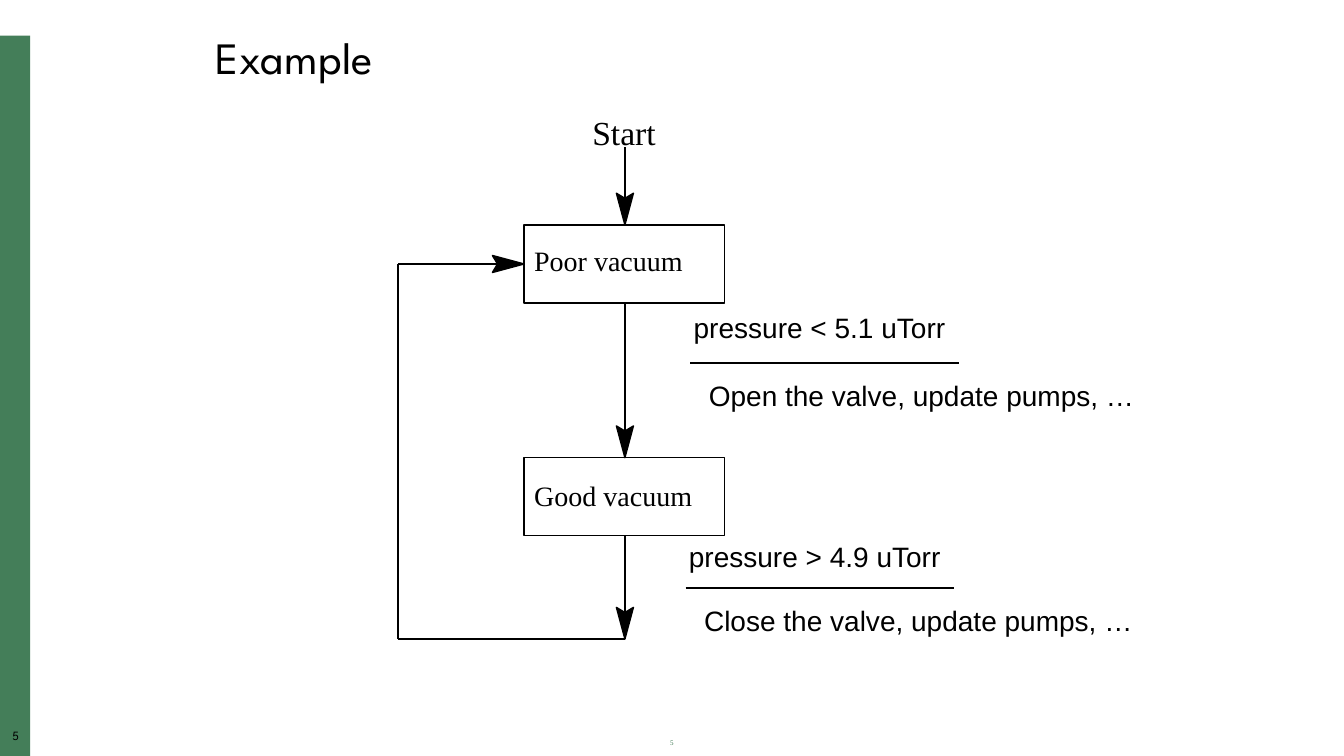
from pptx import Presentation
from pptx.dml.color import RGBColor
from pptx.enum import shapes as kinds, text as txt
from pptx.oxml import parse_xml
from pptx.oxml.ns import nsdecls
from pptx.util import Pt

HUES = {"ink": "000000", "green": "447E59"}
HEAD, SERIF, SANS = "League Spartan", "Times New Roman", "Arial"
AXIS, LOOP = 446.4, 284.4  # x of the main flow and of the return path
LEFT, WIDE, TALL = 374.4, 143.3, 55.8  # state boxes
POOR, GOOD, END = 160.7, 326.9, 456.5  # y of both states and the flow's end


def hue(name):
    return RGBColor.from_string(HUES[name])


def write(frame, words, size, font, color="ink", pads=(7.2, 5, 7.2, 3.6),
          align=txt.PP_ALIGN.LEFT, anchor=txt.MSO_ANCHOR.TOP, wrap=True, space=None):
    """Fill a text frame with one run; pads are left, top, right, bottom."""
    frame.word_wrap = wrap
    frame.vertical_anchor = anchor
    (frame.margin_left, frame.margin_top,
     frame.margin_right, frame.margin_bottom) = map(Pt, pads)
    para = frame.paragraphs[0]
    para.alignment = align
    if space:
        para.line_spacing = space
    run = para.add_run()
    run.text = words
    run.font.size, run.font.name = Pt(size), font
    run.font.color.rgb = hue(color)


def label(slide, box, words, size, font, **style):
    frame = slide.shapes.add_textbox(*map(Pt, box)).text_frame
    write(frame, words, size, font, **style)


def line(slide, *ends):
    link = slide.shapes.add_connector(
        kinds.MSO_CONNECTOR.STRAIGHT, *map(Pt, ends))
    link.line.color.rgb = hue("ink")
    link.line.width = Pt(1)
    link._element.spPr.append(parse_xml(f"<a:effectLst {nsdecls('a')}/>"))


def arrow(slide, x1, y1, x2, y2):
    """Draw a level or upright line ending in a notched head."""
    line(slide, x1, y1, x2, y2)
    size = abs(x2 - x1) + abs(y2 - y1)
    dx, dy = (x2 - x1) / size, (y2 - y1) / size
    spots = [(Pt(x2 - back * dx - side * dy), Pt(y2 - back * dy + side * dx))
             for back, side in ((0, 0), (22.7, 6.1), (19, 0), (22.7, -6.1))]
    path = slide.shapes.build_freeform(*spots[0], scale=1.0)
    path.add_line_segments(spots[1:], close=True)
    tip = path.convert_to_shape()
    tip.shadow.inherit = False
    tip.fill.solid()
    tip.fill.fore_color.rgb = hue("ink")
    tip.line.color.rgb = hue("ink")
    tip.line.width = Pt(1)


def state(slide, box, name, drop):
    rect = slide.shapes.add_shape(kinds.MSO_SHAPE.RECTANGLE, *map(Pt, box))
    rect.shadow.inherit = False
    rect.fill.background()
    rect.line.color.rgb = hue("ink")
    rect.line.width = Pt(1)
    write(rect.text_frame, name, 20, SERIF, pads=(7.2, drop, 0, 0), wrap=False)


def rule(slide, left, top, rise, test, action):
    """Put a condition above a line and its action below."""
    line(slide, left, top, left + 192, top)
    label(slide, (left - 4.8, top - rise, 205, 33), test, 20, SANS, wrap=False)
    label(slide, (left + 6, top + 6.4, 328, 33), action, 20, SANS, wrap=False)


def margin(slide, box, page):
    x, y, wide, tall = box
    bar = slide.shapes.add_shape(kinds.MSO_SHAPE.RECTANGLE, *map(Pt, box))
    bar.shadow.inherit = False
    bar.fill.solid()
    bar.fill.fore_color.rgb = hue("green")
    bar.line.fill.background()
    label(slide, (x, y + tall - 18.7, wide + 0.7, 12.2), page, 9, HEAD,
          pads=(0, 0, 0, 0), align=txt.PP_ALIGN.CENTER, space=0.9)


def chart(slide):
    label(slide, (412.6, 74.9, 66.2, 38.2), "Start", 24, SERIF,
          align=txt.PP_ALIGN.CENTER)
    state(slide, (LEFT, POOR, WIDE, TALL), "Poor vacuum", 13)
    state(slide, (LEFT, GOOD, WIDE, TALL), "Good vacuum", 15)
    rule(slide, 493.2, 259.2, 42.5,
         "pressure < 5.1 uTorr", "Open the valve, update pumps, …")
    rule(slide, 489.8, 420, 39.8,
         "pressure > 4.9 uTorr", "Close the valve, update pumps, …")
    for start, stop in ((105.1, POOR), (POOR + TALL, GOOD), (GOOD + TALL, END)):
        arrow(slide, AXIS, start, AXIS, stop)
    back = POOR + TALL / 2
    line(slide, AXIS, END, LOOP, END)
    line(slide, LOOP, END, LOOP, back)
    arrow(slide, LOOP, back, LEFT, back)


def main():
    deck = Presentation()
    deck.slide_width, deck.slide_height = Pt(960), Pt(540)
    slide = deck.slides.add_slide(deck.slide_layouts[6])
    margin(slide, (0, 25.4, 21.6, 514.6), "5")
    label(slide, (365.8, 524.9, 228.2, 14.4), "5", 5, SERIF, color="green",
          pads=(7.2, 3.6, 7.2, 3.6), align=txt.PP_ALIGN.CENTER, space=0.9)
    label(slide, (146.9, 20.9, 626.4, 42.5), "Example", 32, HEAD,
          pads=(7.2, 3.6, 7.2, 3.6), anchor=txt.MSO_ANCHOR.BOTTOM, space=0.9)
    chart(slide)
    deck.save("out.pptx")


if __name__ == "__main__":
    main()
